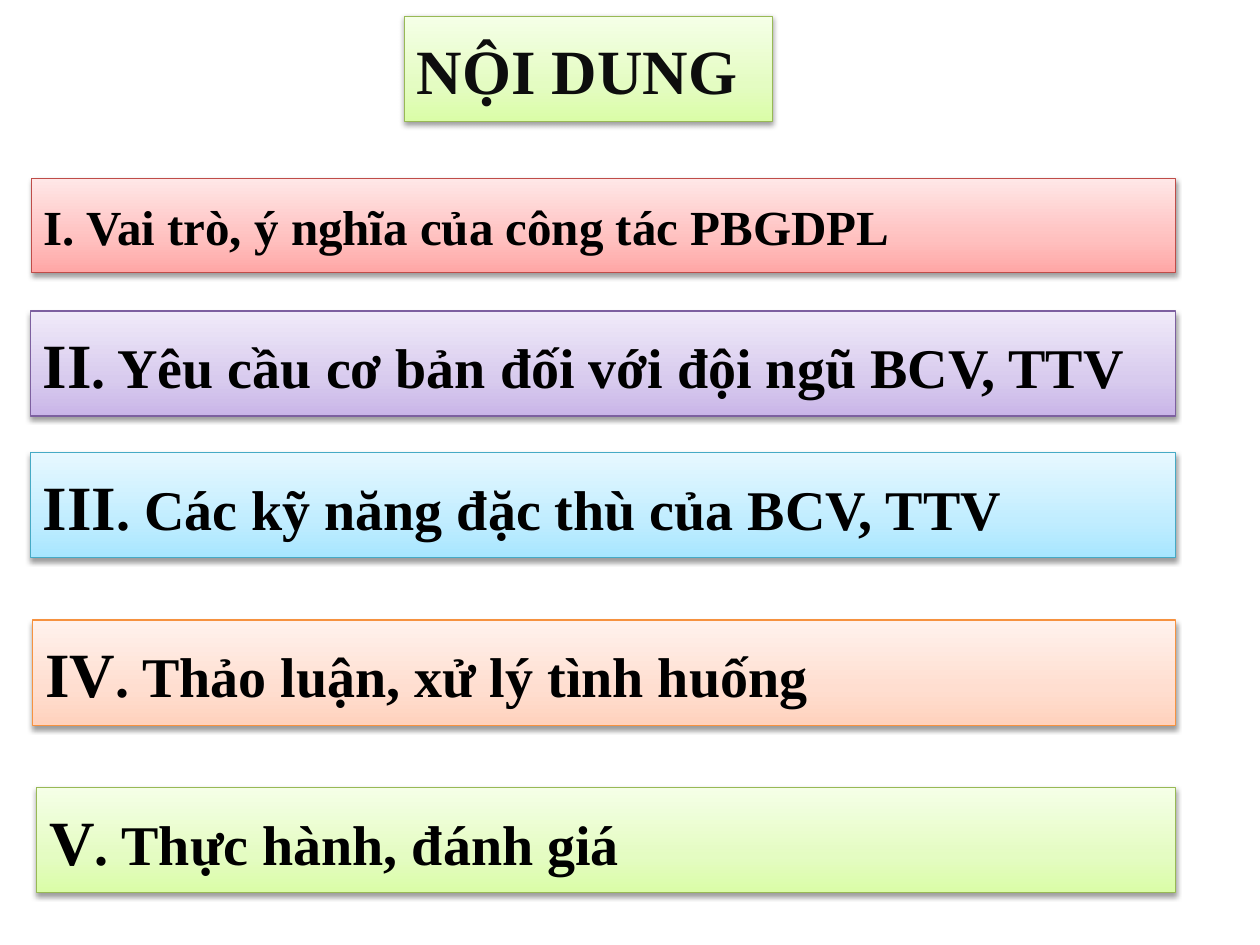
import copy

import lxml.etree
import pptx
import pptx.dml.color
import pptx.enum.shapes
import pptx.enum.text
import pptx.oxml.ns
import pptx.util
from pptx.util import Cm

FONT = "Times New Roman"
GREEN = (("DAFDA7", "E4FCC2", "F5FFE7"), "98B955")
RED = (("FFA6A5", "FFC0BF", "FFE7E7"), "BF4C48")
PURPLE = (("C9B5E8", "D8CBEE", "F0EAF9"), "7D60A0")
BLUE = (("A7E6FF", "C1EDFF", "E7F8FF"), "46AAC5")
ORANGE = (("FFD2BD", "FFDED0", "FFF2ED"), "F69240")
STOP_POSITIONS = (0, 0.35, 1)
RIGHT_EDGE = 23.7
BAR_HEIGHT = 2.12

SECTIONS = [
    (0.63, 3.6, 1.9, RED, [("I. Vai trò, ý nghĩa của công tác PBGDPL", 28)]),
    (0.61, 6.27, BAR_HEIGHT, PURPLE,
     [("II", 36), (". Yêu cầu cơ bản đối với đội ngũ BCV, TTV", 32)]),
    (0.61, 9.12, BAR_HEIGHT, BLUE,
     [("III", 36), (". Các kỹ năng đặc thù của BCV, TTV", 32)]),
    (0.66, 12.5, BAR_HEIGHT, ORANGE,
     [("IV", 36), (". Thảo luận, xử lý tình huống", 32)]),
    (0.74, 15.88, BAR_HEIGHT, GREEN,
     [("V", 36), (". Thực hành, đánh giá", 32)]),
]


def color(value):
    """Turn a hex string into a colour."""
    return pptx.dml.color.RGBColor.from_string(value)


def add_shadow(shape):
    """Give the shape a soft shadow just below it."""
    shape.shadow.inherit = False
    qn = pptx.oxml.ns.qn
    effects = shape._element.spPr.find(qn("a:effectLst"))
    shadow = lxml.etree.SubElement(
        effects, qn("a:outerShdw"), blurRad="40000", dist="20000",
        dir="5400000", rotWithShape="0")
    black = lxml.etree.SubElement(shadow, qn("a:srgbClr"), val="000000")
    lxml.etree.SubElement(black, qn("a:alpha"), val="38000")


def style_box(shape, theme):
    """Apply a three-stop vertical gradient, an outline and a shadow."""
    stop_colors, line_color = theme
    shape.fill.gradient()
    shape.fill.gradient_angle = 90
    stop_list = shape._element.spPr.find(".//" + pptx.oxml.ns.qn("a:gsLst"))
    stop_list.append(copy.deepcopy(stop_list[0]))
    stops = shape.fill.gradient_stops
    for stop, position, value in zip(stops, STOP_POSITIONS, stop_colors):
        stop.position = position
        stop.color.rgb = color(value)
    shape.line.color.rgb = color(line_color)
    shape.line.width = pptx.util.Pt(0.75)
    add_shadow(shape)


def write_text(shape, runs, text_color):
    """Write left-aligned bold runs, centred vertically."""
    frame = shape.text_frame
    frame.word_wrap = True
    frame.auto_size = pptx.enum.text.MSO_AUTO_SIZE.NONE
    frame.vertical_anchor = pptx.enum.text.MSO_ANCHOR.MIDDLE
    paragraph = frame.paragraphs[0]
    paragraph.alignment = pptx.enum.text.PP_ALIGN.LEFT
    for text, size in runs:
        run = paragraph.add_run()
        run.text = text
        run.font.name = FONT
        run.font.size = pptx.util.Pt(size)
        run.font.bold = True
        run.font.color.rgb = color(text_color)


def place_title(slide, left, top, width, height):
    """Move and format the title placeholder."""
    title = slide.shapes.title
    title.left, title.top = Cm(left), Cm(top)
    title.width, title.height = Cm(width), Cm(height)
    style_box(title, GREEN)
    write_text(title, [("NỘI DUNG", 36)], "0D0D0D")


def add_section(slide, left, top, width, height, theme, runs):
    """Add one bar of the contents list."""
    bar = slide.shapes.add_shape(
        pptx.enum.shapes.MSO_SHAPE.RECTANGLE,
        Cm(left), Cm(top), Cm(width), Cm(height))
    style_box(bar, theme)
    write_text(bar, runs, "000000")


def main():
    """Build the contents slide and save it."""
    presentation = pptx.Presentation()
    presentation.slide_width = Cm(25.4)
    presentation.slide_height = Cm(19.05)
    slide = presentation.slides.add_slide(presentation.slide_layouts[5])
    place_title(slide, 8.15, 0.33, 7.42, BAR_HEIGHT)
    for left, top, height, theme, runs in SECTIONS:
        add_section(slide, left, top, RIGHT_EDGE - left, height, theme, runs)
    presentation.save("out.pptx")


if __name__ == "__main__":
    main()
